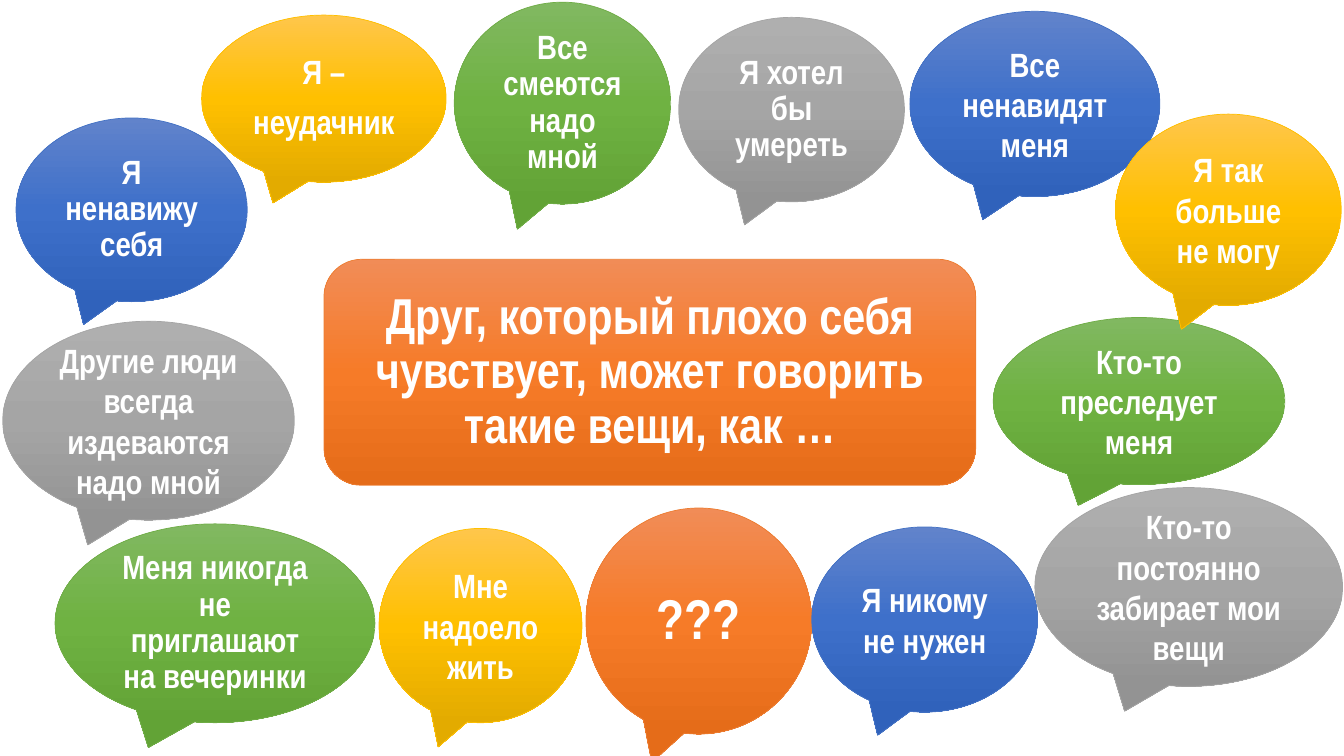
import copy

import pptx
import pptx.dml.color
import pptx.enum.shapes
import pptx.enum.text
import pptx.oxml.ns
import pptx.util

deck = pptx.Presentation()
deck.slide_width = pptx.util.Inches(13.33)
deck.slide_height = pptx.util.Inches(7.5)
slide = deck.slides.add_slide(deck.slide_layouts[6])

# Line colour, then the gradient from top to bottom
tones = {
    "orange": ("ED7D31", "F18C57", "F67B28", "E56C19"),
    "green": ("70AD47", "81B861", "6FB242", "62A336"),
    "gold": ("FFC000", "FFC64B", "FFC000", "E3AB00"),
    "gray": ("A5A5A5", "AFAFAF", "A5A5A5", "939393"),
    "blue": ("4472C4", "6183CB", "3E70CA", "3062BB"),
}

kinds = pptx.enum.shapes.MSO_SHAPE
bubble, panel = kinds.OVAL_CALLOUT, kinds.ROUNDED_RECTANGLE
insets = {bubble: (0.12, 0.12), panel: (0.29, 0.14)}

# Kind, tone, (left, top, width, height) in percent of the slide,
# text size, line spacing, space after as a share of the size, text
items = [
    (bubble, "orange", (43.6, 67.2, 16.8, 29.9), 40, 0.9, 0.4, "???"),
    (bubble, "green", (33.8, 0.3, 16.1, 26.7), 24, 0.9, 0, "Все смеются надо мной"),
    (bubble, "gold", (15, 2, 18.2, 22.1), 24, 0.9, 0.4, "Я –\nнеудачник"),
    (bubble, "green", (73.9, 42, 21.7, 22.1), 24, 1, 0, "Кто-то преследует меня"),
    (bubble, "gray", (77, 64.5, 22.9, 26.3), 24, 1, 0, "Кто-то постоянно забирает мои вещи"),
    (bubble, "blue", (60.4, 69.7, 16.8, 24.5), 24, 1, 0, "Я никому не нужен"),
    (bubble, "gold", (28.2, 69.9, 15.1, 25.7), 24, 1, 0, "Мне надоело жить"),
    (bubble, "green", (4.1, 69.3, 23.8, 26.3), 24, 0.9, 0, "Меня никогда не приглашают на вечеринки"),
    (bubble, "gray", (0.2, 42.5, 21.7, 26.3), 24, 1, 0, "Другие люди всегда издеваются надо мной"),
    (bubble, "gray", (50.5, 2.3, 16.8, 24.4), 24, 0.9, 0.4, "Я хотел бы умереть"),
    (panel, "orange", (24.1, 34.3, 48.5, 29.9), 36, 0.9, 0.4,
     "Друг, который плохо себя чувствует, может говорить такие вещи, как …"),
    (bubble, "blue", (1.2, 15.6, 17.2, 24.3), 24, 0.9, 0, "Я ненавижу себя"),
    (bubble, "blue", (67.7, 1.5, 18.6, 24.5), 24, 1, 0, "Все ненавидят меня"),
    (bubble, "gold", (83, 15.1, 16.8, 25.3), 24, 1, 0, "Я так больше не могу"),
]


def paint(color, code):
    color.rgb = pptx.dml.color.RGBColor.from_string(code)


for kind, tone, box, size, lead, gap, text in items:
    sides = (deck.slide_width, deck.slide_height) * 2
    place = [int(side * part / 100) for side, part in zip(sides, box)]
    shape = slide.shapes.add_shape(kind, *place)
    shape.shadow.inherit = False

    edge, *shades = tones[tone]
    shape.fill.gradient()
    shape.fill.gradient_angle = 270
    stops = next(shape.element.iter(pptx.oxml.ns.qn("a:gsLst")))
    stops.append(copy.deepcopy(stops[0]))
    for stop, spot, shade in zip(shape.fill.gradient_stops, (0, 0.5, 1), shades):
        stop.position = spot
        paint(stop.color, shade)
    paint(shape.line.color, edge)
    shape.line.width = pptx.util.Pt(0.5)

    frame = shape.text_frame
    frame.word_wrap = True
    frame.vertical_anchor = pptx.enum.text.MSO_ANCHOR.MIDDLE
    across, down = map(pptx.util.Inches, insets[kind])
    frame.margin_left = frame.margin_right = across
    frame.margin_top = frame.margin_bottom = down
    frame.text = text
    for para in frame.paragraphs:
        para.alignment = pptx.enum.text.PP_ALIGN.CENTER
        para.line_spacing = float(lead)
        para.space_after = pptx.util.Pt(size * gap)
        para.font.name = "Arial Narrow"
        para.font.size = pptx.util.Pt(size)
        para.font.bold = True
        paint(para.font.color, "FFFFFF")

deck.save("out.pptx")
